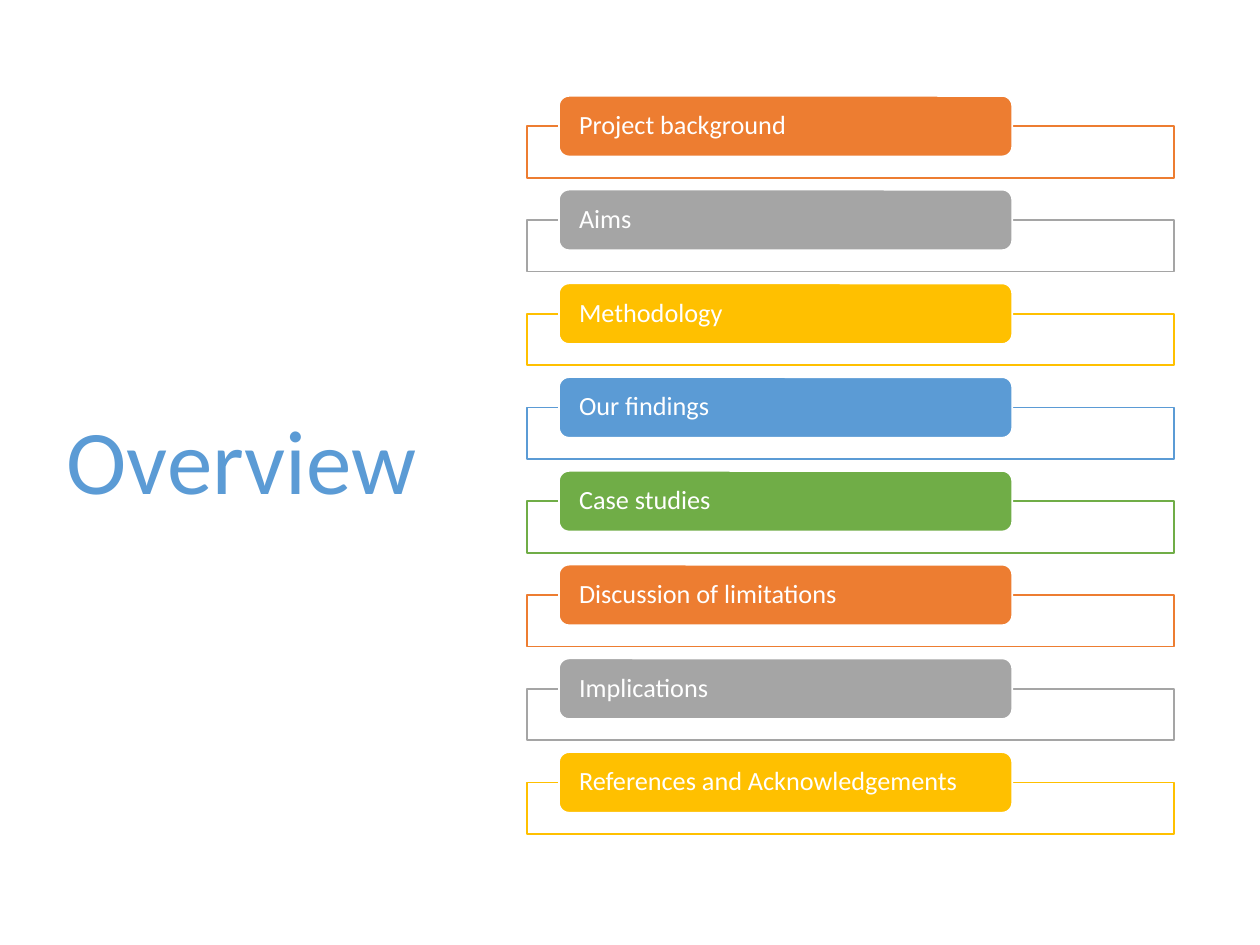
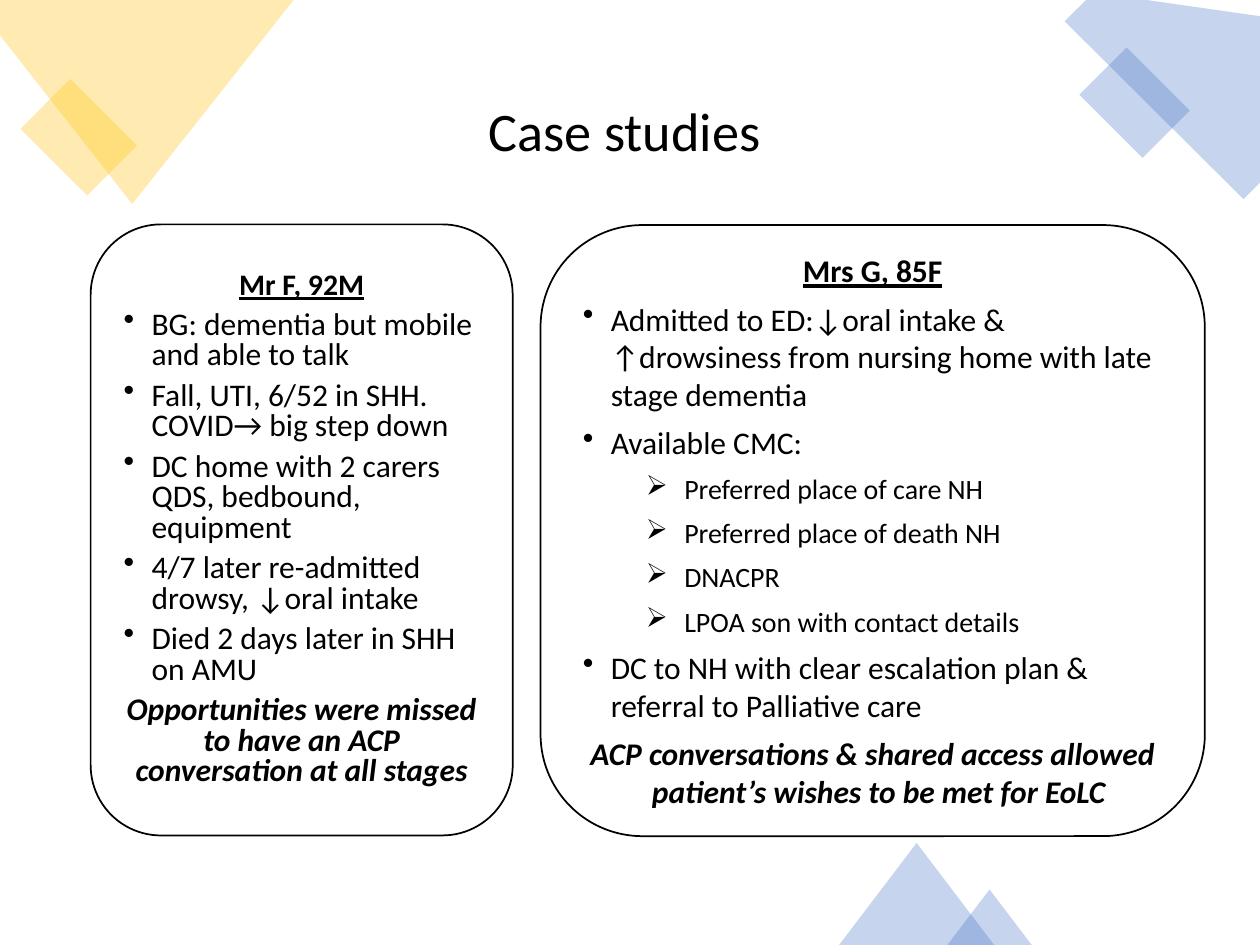
from collections import namedtuple

from lxml.etree import SubElement
from pptx import Presentation
from pptx.dml.color import RGBColor
from pptx.enum.shapes import MSO_SHAPE
from pptx.enum.text import MSO_ANCHOR, PP_ALIGN
from pptx.oxml.ns import qn
from pptx.util import Pt

FONT = "Calibri"
COLORS = {
    "white": "FFFFFF", "black": "000000", "orange": "ED7D31", "grey": "A5A5A5",
    "gold": "FFC000", "sky": "5B9BD5", "green": "70AD47", "blue": "4472C4",
}
TOPIC_COLORS = ("orange", "grey", "gold", "sky", "green")
TOPICS = (
    "Project background", "Aims", "Methodology", "Our findings", "Case studies",
    "Discussion of limitations", "Implications", "References and Acknowledgements",
)

Box = namedtuple("Box", "left top width height")
# Indents are (left margin, first line) in points
Style = namedtuple("Style", "size bold italic underline centred indent bullet level",
                   defaults=(False, False, False, False, (0, 0), None, 0))

HEADING = Style(18, bold=True, underline=True, centred=True)
POINT = Style(18, indent=(16, -16), bullet="•")
SUBPOINT = Style(16, indent=(58, -22), bullet="➢", level=1)
LESSON = Style(18, bold=True, italic=True, centred=True)

LEFT_POINT = POINT._replace(indent=(16, -18))
CASE_F = (
    ("Mr F, 92M", HEADING._replace(size=17)),
    ("BG: dementia but mobile and able to talk", LEFT_POINT),
    ("Fall, UTI, 6/52 in SHH. COVID→ big step down", LEFT_POINT),
    ("DC home with 2 carers QDS, bedbound, equipment", LEFT_POINT),
    ("4/7 later re-admitted drowsy, ↓oral intake", LEFT_POINT),
    ("Died 2 days later in SHH on AMU", LEFT_POINT),
    ("Opportunities were missed to have an ACP conversation at all stages", LESSON),
)
CASE_G = (
    ("Mrs G, 85F", HEADING),
    ("Admitted to ED:↓oral intake & ↑drowsiness from nursing home with late "
     "stage dementia", POINT),
    ("Available CMC:", POINT),
    ("Preferred place of care NH", SUBPOINT),
    ("Preferred place of death NH", SUBPOINT),
    ("DNACPR", SUBPOINT),
    ("LPOA son with contact details", SUBPOINT),
    ("DC to NH with clear escalation plan & referral to Palliative care", POINT),
    ("ACP conversations & shared access allowed patient’s wishes to be met for EoLC",
     LESSON._replace(indent=(7, -7))),
)


def rgb(color):
    return RGBColor.from_string(COLORS[color])


def paint(shape, fill, line=None, opacity=100):
    """Set fill, optional 1 pt outline and opacity in percent; drop the shadow."""
    shape.shadow.inherit = False
    shape.fill.solid()
    shape.fill.fore_color.rgb = rgb(fill)
    if opacity < 100:
        srgb = shape.fill._xPr.find(".//" + qn("a:srgbClr"))
        SubElement(srgb, qn("a:alpha"), val=str(opacity * 1000))
    if line:
        shape.line.color.rgb = rgb(line)
        shape.line.width = Pt(1)
    else:
        shape.line.fill.background()


def add_preset(slide, preset, box, fill, line=None, opacity=100):
    shape = slide.shapes.add_shape(preset, *map(Pt, box))
    paint(shape, fill, line, opacity)
    return shape


def add_outline(slide, corners, fill, opacity):
    start, *others = [(Pt(x), Pt(y)) for x, y in corners]
    builder = slide.shapes.build_freeform(*start)
    builder.add_line_segments(others, close=True)
    paint(builder.convert_to_shape(), fill, opacity=opacity)


def write(paragraph, text, style, color, spacing=1.0, space_after=0):
    paragraph.text = text
    paragraph.level = style.level
    paragraph.alignment = PP_ALIGN.CENTER if style.centred else PP_ALIGN.LEFT
    paragraph.line_spacing = spacing
    paragraph.space_after = Pt(space_after)
    properties = paragraph._p.get_or_add_pPr()
    margin, first_line = style.indent
    properties.set("marL", str(Pt(margin)))
    properties.set("indent", str(Pt(first_line)))
    if style.bullet:
        SubElement(properties, qn("a:buChar"), char=style.bullet)
    for run in paragraph.runs:
        font = run.font
        font.name, font.size, font.color.rgb = FONT, Pt(style.size), rgb(color)
        font.bold, font.italic, font.underline = style.bold, style.italic, style.underline


def add_title(slide, box, text, style, color, anchor):
    frame = slide.shapes.add_textbox(*map(Pt, box)).text_frame
    frame.word_wrap = True
    frame.vertical_anchor = anchor
    write(frame.paragraphs[0], text, style, color, spacing=0.9)


def add_topic(slide, box, topic, color):
    """Draw an open bar with a coloured tab over its top edge."""
    tab_height = 34.6
    bar_top = box.top + tab_height / 2
    bar = Box(box.left, bar_top, box.width, box.top + box.height - bar_top)
    add_preset(slide, MSO_SHAPE.RECTANGLE, bar, "white", color, opacity=90)
    tab = add_preset(slide, MSO_SHAPE.ROUNDED_RECTANGLE,
                     Box(box.left + 18.4, box.top, box.width * 0.7, tab_height),
                     color, "white")
    frame = tab.text_frame
    frame.word_wrap = True
    frame.vertical_anchor = MSO_ANCHOR.MIDDLE
    frame.margin_left = frame.margin_right = Pt(9.8)
    frame.margin_top = frame.margin_bottom = 0
    write(frame.paragraphs[0], topic, Style(15), "white", spacing=0.9)


def add_topic_list(slide, box):
    topic_height = 46.8
    step = (box.height - topic_height) / (len(TOPICS) - 1)
    for index, topic in enumerate(TOPICS):
        add_topic(slide, Box(box.left, box.top + index * step, box.width, topic_height),
                  topic, TOPIC_COLORS[index % len(TOPIC_COLORS)])


def add_corner_decor(slide):
    """Place the translucent shapes at the top corners and the bottom edge."""
    opacity = 30
    add_outline(slide, ((0, 0), (167.8, 0), (75.6, 116.6), (0, 20.2)), "gold", opacity)
    add_outline(slide, ((625, -4.3), (720.7, 9.4), (733, 91.4), (710.6, 113.8),
                        (608.4, 12.2)), "blue", opacity)
    for box, color in ((Box(18, 58.3, 54, 40.3), "gold"),
                       (Box(622.8, 39.6, 51.1, 38.2), "blue")):
        add_preset(slide, MSO_SHAPE.RECTANGLE, box, color, opacity=opacity).rotation = 45
    for box in (Box(479.5, 481.7, 88.6, 58.3), Box(541.4, 508.3, 48.2, 31.7)):
        add_preset(slide, MSO_SHAPE.ISOSCELES_TRIANGLE, box, "blue", opacity=opacity)


def add_case(slide, box, lines, spacing):
    panel = add_preset(slide, MSO_SHAPE.ROUNDED_RECTANGLE, box, "white", "black")
    frame = panel.text_frame
    frame.word_wrap = True
    frame.vertical_anchor = MSO_ANCHOR.MIDDLE
    frame.text = "\n".join(text for text, _ in lines)
    for paragraph, (text, style) in zip(frame.paragraphs, lines):
        write(paragraph, text, style, "black", spacing, space_after=6)


def build_overview(slide):
    add_title(slide, Box(31, 49, 224.6, 433.4), "Overview", Style(52), "sky",
              MSO_ANCHOR.MIDDLE)
    add_topic_list(slide, Box(301, 54.8, 370, 421.8))


def build_case_studies(slide):
    add_title(slide, Box(268.6, 56.2, 183.6, 49), "Case studies ",
              Style(31, centred=True), "black", MSO_ANCHOR.TOP)
    add_corner_decor(slide)
    add_case(slide, Box(51.8, 128.2, 241.2, 349.2), CASE_F, spacing=0.8)
    add_case(slide, Box(308.9, 128.6, 379.6, 349.2), CASE_G, spacing=1.0)


def main():
    deck = Presentation()
    deck.slide_width, deck.slide_height = Pt(720), Pt(540)
    blank = deck.slide_layouts[6]
    for build in (build_overview, build_case_studies):
        build(deck.slides.add_slide(blank))
    deck.save("out.pptx")


if __name__ == "__main__":
    main()
